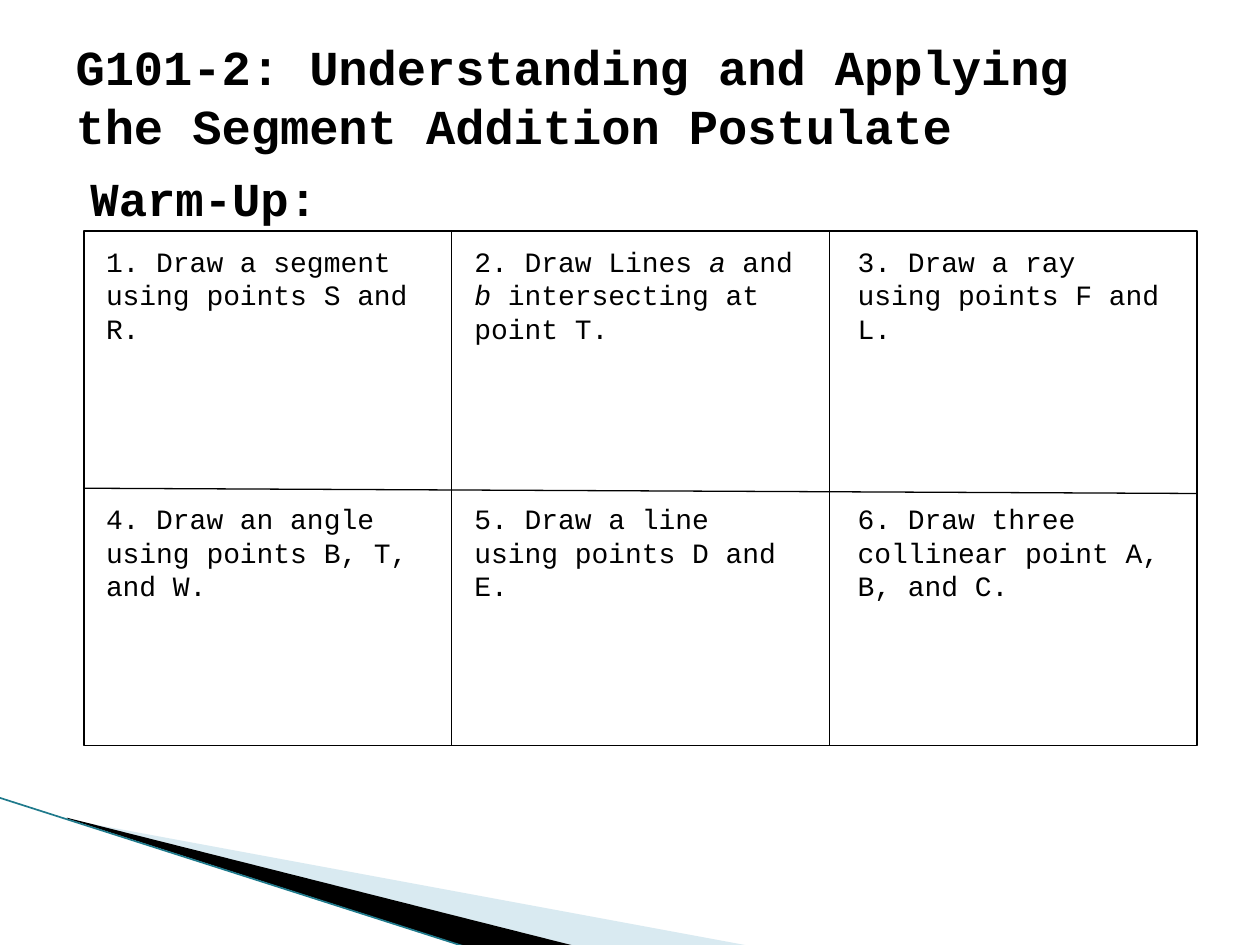
from lxml import etree
from pptx import Presentation
from pptx.dml.color import RGBColor
from pptx.enum.shapes import MSO_CONNECTOR, MSO_SHAPE
from pptx.enum.text import MSO_ANCHOR, MSO_AUTO_SIZE, PP_ALIGN
from pptx.oxml.ns import qn
from pptx.util import Pt

STRAIGHT = MSO_CONNECTOR.STRAIGHT
RECTANGLE = MSO_SHAPE.RECTANGLE
MIDDLE, TOP = MSO_ANCHOR.MIDDLE, MSO_ANCHOR.TOP
NO_AUTOFIT = MSO_AUTO_SIZE.NONE
LEFT = PP_ALIGN.LEFT
LEFT_SIDE = 1

COLORS = {"ink": "000000", "pale": "A0CBDC", "teal": "1F7A8C"}
HEADING = {"name": "Courier New", "bold": True}
TASK = {"name": "Courier New", "size": Pt(16)}

GRID_LEFT, GRID_TOP, GRID_WIDTH, GRID_HEIGHT = 48, 132, 636, 294
COLUMN_DIVIDERS = (258, 474)
TASK_COLUMNS = ((53.5, 192), (264, 201), (483, 192))
TASK_ROWS = (136, 283)
TASKS = (
    (
        ("1. Draw a segment using points S and R.",),
        ("2. Draw Lines ", "a", " and ", "b", " intersecting at point T."),
        ("3. Draw a ray using points F and L.",),
    ),
    (
        ("4. Draw an angle using points B, T, and W.",),
        ("5. Draw a line using points D and E.",),
        ("6. Draw three collinear point A, B, and C.",),
    ),
)
PALE_WEDGE = ((39.6, 468.5), (428.4, 540.5), (328.3, 540.5), (39.6, 468))
DARK_WEDGE = ((38.2, 467.3), (329, 540.7), (267.8, 541.4), (38.9, 468))


def color(key):
    return RGBColor.from_string(COLORS[key])


def write_text(shape, runs, style, anchor=TOP):
    frame = shape.text_frame
    settings = {"word_wrap": True, "auto_size": NO_AUTOFIT, "vertical_anchor": anchor}
    for name, value in settings.items():
        setattr(frame, name, value)
    paragraph = frame.paragraphs[0]
    paragraph.alignment = LEFT
    for index, text in enumerate(runs):
        run = paragraph.add_run()
        run.text = text
        for name, value in style.items():
            setattr(run.font, name, value)
        run.font.italic = index % 2 == 1
        run.font.color.rgb = color("ink")


def add_text(slide, left, top, width, height, runs, style):
    box = slide.shapes.add_textbox(Pt(left), Pt(top), Pt(width), Pt(height))
    write_text(box, runs, style)


def add_title(slide, text):
    title = slide.shapes.title
    bounds = {"left": 36, "top": 17, "width": 648, "height": 75}
    for name, value in bounds.items():
        setattr(title, name, Pt(value))
    write_text(title, (text,), {**HEADING, "size": Pt(27.9)}, MIDDLE)


def add_line(slide, start, end, key="ink", weight=0.75):
    line = slide.shapes.add_connector(STRAIGHT, *map(Pt, start + end))
    line.line.color.rgb = color(key)
    line.line.width = Pt(weight)
    etree.SubElement(line._element.spPr, qn("a:effectLst"))
    return line


def add_wedge(slide, points, key, opacity=100):
    corners = [(Pt(x), Pt(y)) for x, y in points]
    builder = slide.shapes.build_freeform(*corners[0])
    builder.add_line_segments(corners[1:], close=True)
    wedge = builder.convert_to_shape()
    wedge.shadow.inherit = False
    wedge.fill.solid()
    wedge.fill.fore_color.rgb = color(key)
    wedge.line.fill.background()
    if opacity < 100:
        tint = wedge._element.spPr.find(f"{qn('a:solidFill')}/{qn('a:srgbClr')}")
        etree.SubElement(tint, qn("a:alpha")).set("val", str(opacity * 1000))


def add_grid(slide):
    frame = slide.shapes.add_shape(
        RECTANGLE, Pt(GRID_LEFT), Pt(GRID_TOP), Pt(GRID_WIDTH), Pt(GRID_HEIGHT)
    )
    frame.shadow.inherit = False
    frame.fill.background()
    frame.line.color.rgb = color("ink")
    frame.line.width = Pt(0.75)
    for x in COLUMN_DIVIDERS:
        add_line(slide, (x, GRID_TOP), (x, GRID_TOP + GRID_HEIGHT))
    middle = GRID_TOP + GRID_HEIGHT / 2
    row_divider = add_line(
        slide, (GRID_LEFT, middle), (GRID_LEFT + GRID_WIDTH, middle + 3)
    )
    row_divider.begin_connect(frame, LEFT_SIDE)


def add_tasks(slide):
    for top, row in zip(TASK_ROWS, TASKS):
        for (left, width), runs in zip(TASK_COLUMNS, row):
            add_text(slide, left, top, width, 65.5, runs, TASK)


def main():
    deck = Presentation()
    deck.slide_width, deck.slide_height = Pt(720), Pt(540)
    slide = deck.slides.add_slide(deck.slide_layouts[5])
    add_wedge(slide, PALE_WEDGE, "pale", 40)
    add_wedge(slide, DARK_WEDGE, "ink")
    add_line(slide, (-0.5, 455.8), (267.1, 541.4), "teal", 0.95)
    add_title(slide, "G101-2: Understanding and Applying the Segment Addition Postulate")
    add_text(slide, 44.6, 93, 400, 38, ("Warm-Up:",), {**HEADING, "size": Pt(27)})
    add_grid(slide)
    add_tasks(slide)
    deck.save("out.pptx")


if __name__ == "__main__":
    main()
